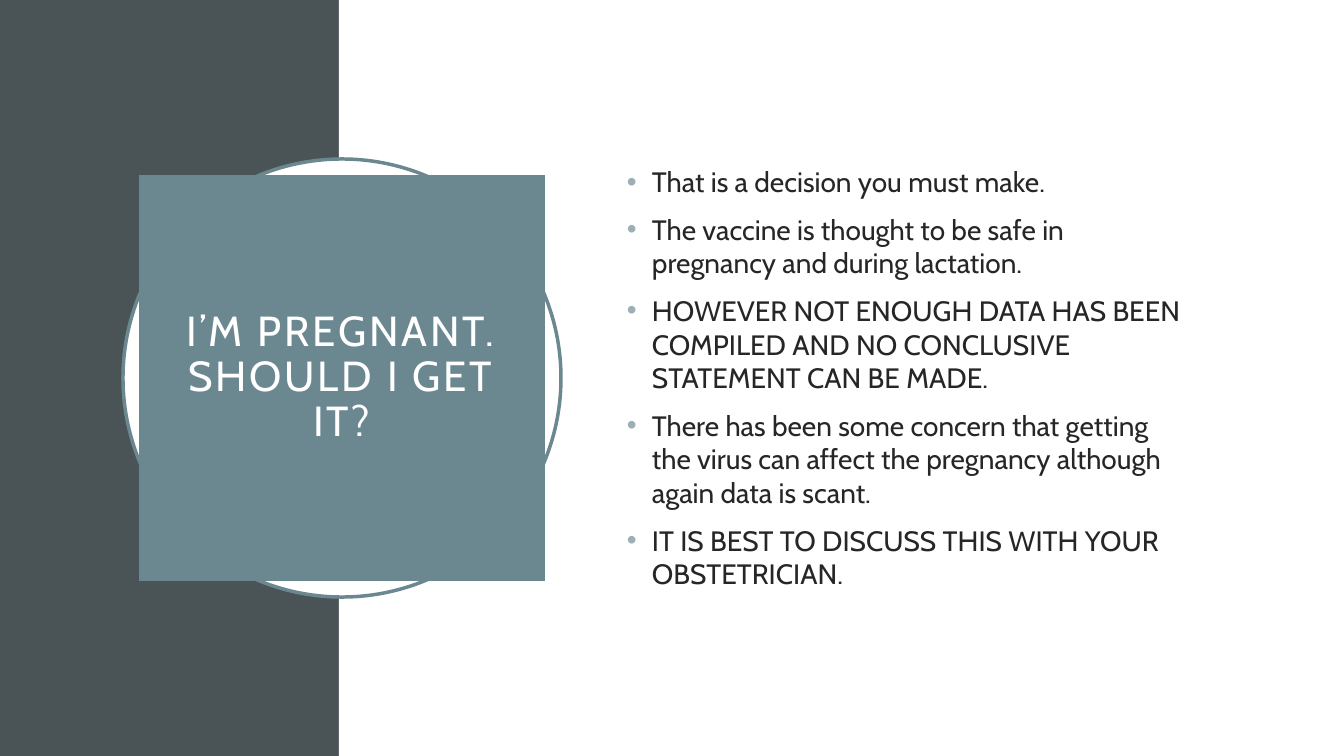
"""Build a slide answering whether to take the vaccine during pregnancy."""
from dataclasses import dataclass

from lxml import etree
from pptx import Presentation
from pptx.dml.color import RGBColor
from pptx.enum.shapes import MSO_SHAPE
from pptx.enum.text import MSO_ANCHOR, PP_ALIGN
from pptx.oxml.ns import qn
from pptx.util import Pt

QUESTION = "I’M PREGNANT. SHOULD I GET IT?"
ANSWERS = [
    "That is a decision you must make.",
    "The vaccine is thought to be safe in pregnancy and during lactation.",
    "HOWEVER NOT ENOUGH DATA HAS BEEN COMPILED AND NO CONCLUSIVE STATEMENT CAN BE MADE.",
    "There has been some concern that getting the virus can affect the pregnancy "
    "although again data is scant.",
    "IT IS BEST TO DISCUSS THIS WITH YOUR OBSTETRICIAN.",
]

RECTANGLE, OVAL = MSO_SHAPE.RECTANGLE, MSO_SHAPE.OVAL
MIDDLE = MSO_ANCHOR.MIDDLE
LEFT, CENTER = PP_ALIGN.LEFT, PP_ALIGN.CENTER


@dataclass(frozen=True)
class Theme:
    """Colours, font and type sizes."""
    font: str = "Cabin"
    band: str = "4A5356"
    accent: str = "6B8891"
    bullet: str = "9BAFB5"
    white: str = "FFFFFF"
    ink: str = "262626"
    question_size: int = 30
    answer_size: int = 20
    ring_width: float = 2.5


THEME = Theme()
EMU_PER_PX = 914400 / 100.8
SLIDE_W, SLIDE_H = 1344, 756
BAND_W = 339
BADGE_X, BADGE_Y = 342, SLIDE_H // 2
RING_SIZE, BADGE_SIZE = 438, 406
BADGE_INSET = 20
ANSWERS_BOX = (617, 154, 587, 447)
BULLET_INDENT = 25


def px(length):
    """Turn pixels into EMU."""
    return round(length * EMU_PER_PX)


def centred(size):
    """Return the box of a square centred on the badge."""
    return BADGE_X - size // 2, BADGE_Y - size // 2, size, size


def add_block(slide, kind, box, fill, line=None):
    """Add a flat filled shape, outlined only if a line colour is given."""
    block = slide.shapes.add_shape(kind, *map(px, box))
    block.shadow.inherit = False
    block.fill.solid()
    block.fill.fore_color.rgb = RGBColor.from_string(fill)
    if line:
        block.line.color.rgb = RGBColor.from_string(line)
        block.line.width = Pt(THEME.ring_width)
    else:
        block.line.fill.background()
    return block


def add_bullet(paragraph, color):
    """Give a paragraph a hanging coloured bullet."""
    properties = paragraph._p.get_or_add_pPr()
    properties.set("marL", str(px(BULLET_INDENT)))
    properties.set("indent", str(-px(BULLET_INDENT)))
    bullet_color = etree.SubElement(properties, qn("a:buClr"))
    etree.SubElement(bullet_color, qn("a:srgbClr"), val=color)
    etree.SubElement(properties, qn("a:buFont"), typeface="Arial")
    etree.SubElement(properties, qn("a:buChar"), char="•")


def write(frame, lines, *, size, color, align=LEFT, leading=1.0, before=0,
          tracking=0, bullet=None):
    """Fill a text frame with one formatted paragraph per line."""
    frame.word_wrap = True
    frame.vertical_anchor = MIDDLE
    for index, line in enumerate(lines):
        paragraph = frame.add_paragraph() if index else frame.paragraphs[0]
        paragraph.alignment = align
        paragraph.line_spacing = leading
        paragraph.space_before = Pt(before)
        if bullet:
            add_bullet(paragraph, bullet)
        run = paragraph.add_run()
        run.text = line
        run.font.name = THEME.font
        run.font.size = Pt(size)
        run.font.color.rgb = RGBColor.from_string(color)
        if tracking:
            run.font._element.set("spc", str(tracking * 100))


def main():
    """Lay out the slide and save it."""
    deck = Presentation()
    deck.slide_width, deck.slide_height = px(SLIDE_W), px(SLIDE_H)
    slide = deck.slides.add_slide(deck.slide_layouts[6])

    add_block(slide, RECTANGLE, (0, 0, BAND_W, SLIDE_H), THEME.band)
    add_block(slide, RECTANGLE, (BAND_W, 0, SLIDE_W - BAND_W, SLIDE_H), THEME.white)
    add_block(slide, OVAL, centred(RING_SIZE), THEME.white, THEME.accent)

    badge = add_block(slide, RECTANGLE, centred(BADGE_SIZE), THEME.accent).text_frame
    badge.margin_left = badge.margin_right = px(BADGE_INSET)
    badge.margin_top = badge.margin_bottom = px(BADGE_INSET)
    write(badge, [QUESTION], size=THEME.question_size, color=THEME.white,
          align=CENTER, leading=0.9, tracking=2)

    answers = slide.shapes.add_textbox(*map(px, ANSWERS_BOX)).text_frame
    write(answers, ANSWERS, size=THEME.answer_size, color=THEME.ink,
          before=10, bullet=THEME.bullet)

    deck.save("out.pptx")


if __name__ == "__main__":
    main()
